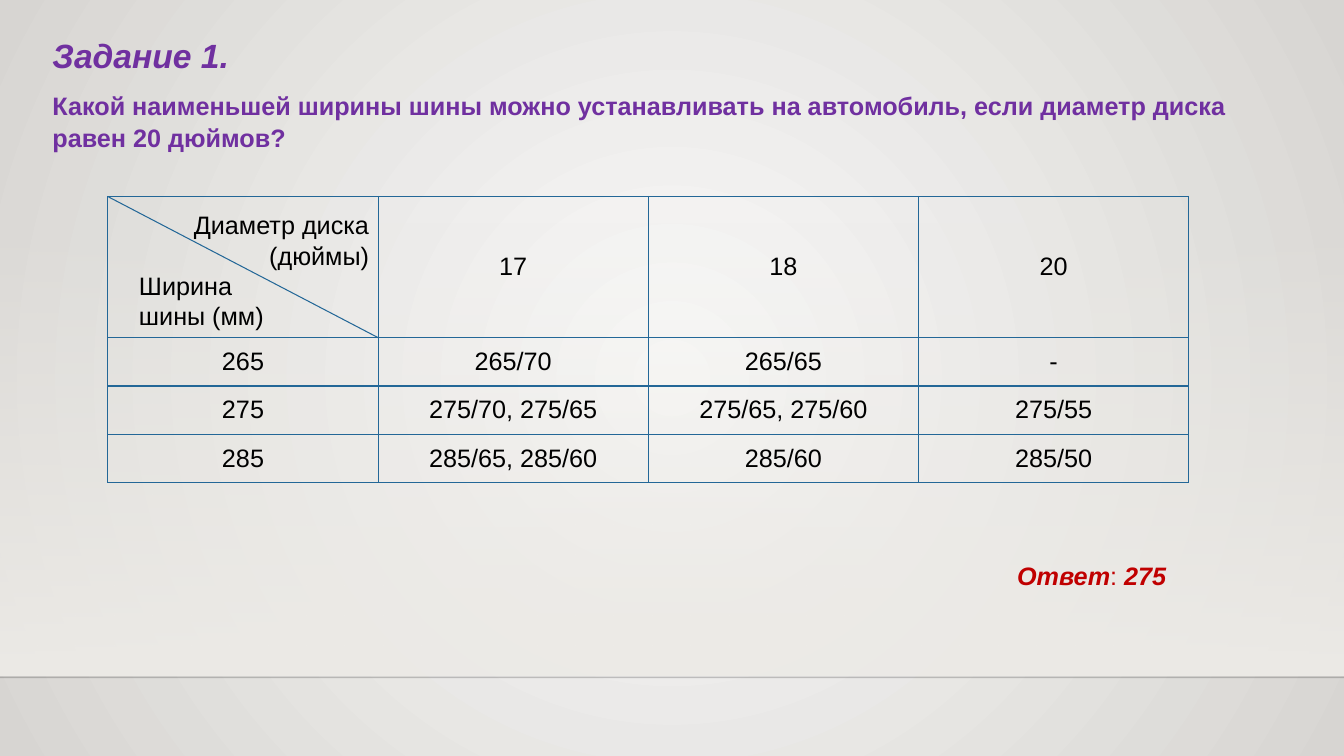
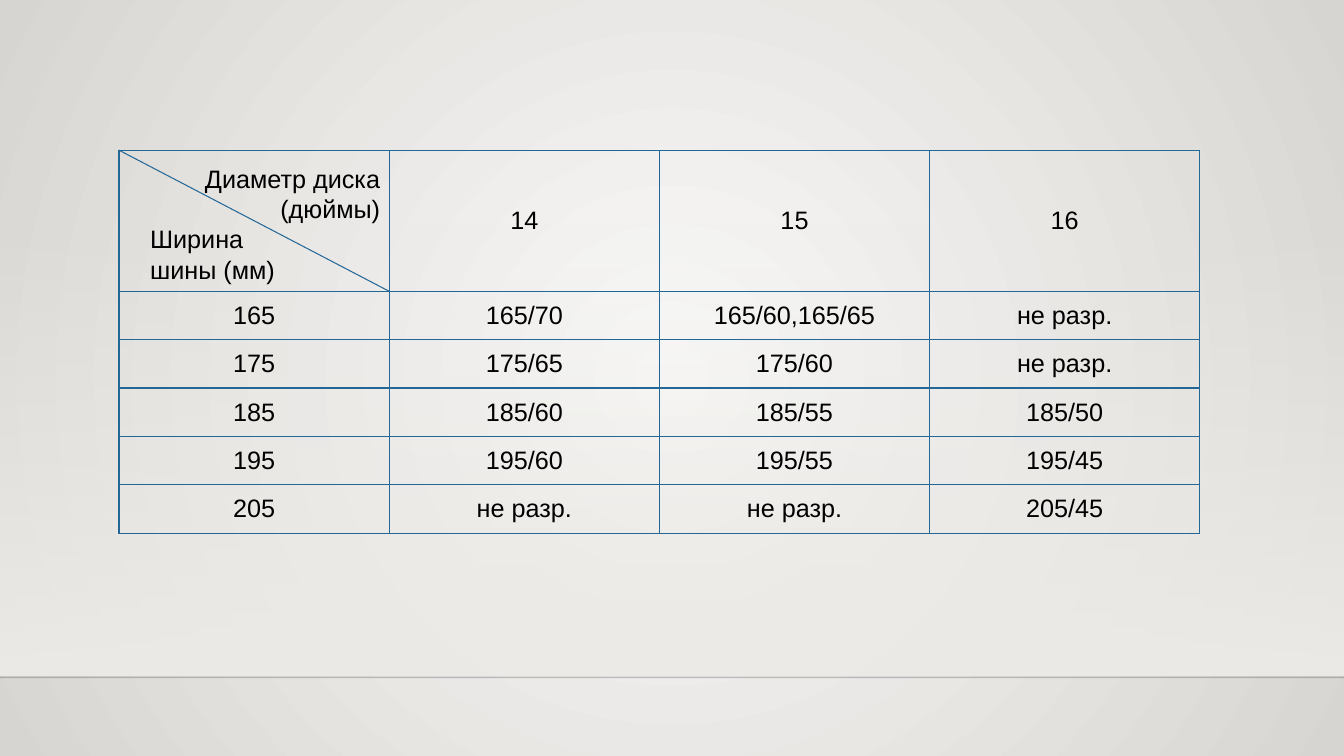
from lxml import etree
from pptx import Presentation
from pptx.dml.color import RGBColor
from pptx.enum.shapes import MSO_CONNECTOR, MSO_SHAPE
from pptx.enum.text import MSO_ANCHOR, MSO_AUTO_SIZE, PP_ALIGN
from pptx.oxml.ns import qn
from pptx.util import Inches, Pt

LEFT, CENTER, RIGHT = PP_ALIGN.LEFT, PP_ALIGN.CENTER, PP_ALIGN.RIGHT
TOP, MIDDLE = MSO_ANCHOR.TOP, MSO_ANCHOR.MIDDLE
NO_AUTOFIT = MSO_AUTO_SIZE.NONE
STRAIGHT, RECTANGLE = MSO_CONNECTOR.STRAIGHT, MSO_SHAPE.RECTANGLE

FONT = "Arial"
BLACK = RGBColor(0x00, 0x00, 0x00)
PURPLE = RGBColor(0x70, 0x30, 0xA0)
RED = RGBColor(0xC0, 0x00, 0x00)
GRID_BLUE = RGBColor(0x23, 0x67, 0x97)
FLOOR_LINE = RGBColor(0x00, 0x00, 0x01)
CENTER_GRAY = RGBColor(0xFA, 0xFA, 0xF9)
EDGE_GRAY = RGBColor(0xD7, 0xD5, 0xD2)
BAND_GRAY = RGBColor(0xED, 0xEB, 0xE7)

SLIDE_W, SLIDE_H = 13.33, 7.5
COLUMN_W, HEADER_H, ROW_H = 2.68, 1.4, 0.48
CELL_MARGIN = 0.01

TASK = "Задание 1."
QUESTION = ("Какой наименьшей ширины шины можно устанавливать на автомобиль, "
            "если диаметр диска равен 20 дюймов?")
ANSWER = [("Ответ", True), (": ", False), ("275", True)]

# Corner labels: lines, alignment, offset in the corner cell, size
CORNER_LABELS = [
    (["Диаметр диска", "(дюймы)"], RIGHT, (0.73, 0.08), (1.96, 0.71)),
    (["Ширина", "шины (мм)"], LEFT, (0.21, 0.68), (1.52, 0.71)),
]

TASK_TIRES = [
    ["", "17", "18", "20"],
    ["265", "265/70", "265/65", "-"],
    ["275", "275/70, 275/65", "275/65, 275/60", "275/55"],
    ["285", "285/65, 285/60", "285/60", "285/50"],
]
ALLOWED_TIRES = [
    ["", "14", "15", "16"],
    ["165", "165/70", "165/60,165/65", "не разр."],
    ["175", "175/65", "175/60", "не разр."],
    ["185", "185/60", "185/55", "185/50"],
    ["195", "195/60", "195/55", "195/45"],
    ["205", "не разр.", "не разр.", "205/45"],
]


def write(paragraph, text, size=18, color=BLACK, bold=False, italic=False, align=LEFT):
    """Append one formatted run to the paragraph."""
    paragraph.alignment = align
    run = paragraph.add_run()
    run.text = text
    font = run.font
    font.name, font.size, font.bold, font.italic = FONT, Pt(size), bold, italic
    font.color.rgb = color


def add_color(parent, color, alpha=100):
    node = etree.SubElement(parent, qn("a:srgbClr"), val=str(color))
    if alpha < 100:
        etree.SubElement(node, qn("a:alpha"), val=str(alpha * 1000))


def set_gradient(fill, owner, stops, radial=False):
    """Fill with (color, alpha) stops, from the centre out or from the top down."""
    fill.gradient()
    gradient = owner.xpath(".//a:gradFill")[0]
    for child in list(gradient):
        gradient.remove(child)
    stop_list = etree.SubElement(gradient, qn("a:gsLst"))
    for index, (color, alpha) in enumerate(stops):
        position = str(index * 100000 // (len(stops) - 1))
        add_color(etree.SubElement(stop_list, qn("a:gs"), pos=position), color, alpha)
    if radial:
        circle = etree.SubElement(gradient, qn("a:path"))
        circle.set("path", "circle")
        etree.SubElement(circle, qn("a:fillToRect"), l="50000", t="50000", r="50000", b="50000")
    else:
        etree.SubElement(gradient, qn("a:lin"), ang="5400000", scaled="0")


def add_line(slide, x1, y1, x2, y2, color, width):
    line = slide.shapes.add_connector(STRAIGHT, Inches(x1), Inches(y1), Inches(x2), Inches(y2))
    line.line.color.rgb = color
    line.line.width = Pt(width)
    etree.SubElement(line.element.spPr, qn("a:effectLst"))
    return line


def add_text_frame(slide, x, y, w, h, wrap=True):
    frame = slide.shapes.add_textbox(Inches(x), Inches(y), Inches(w), Inches(h)).text_frame
    frame.word_wrap = wrap
    return frame


def style_master(master, slide):
    """Set the shared background; the slide only serves to create its band and line."""
    set_gradient(master.background.fill, master.element,
                 [(CENTER_GRAY, 100), (EDGE_GRAY, 100)], radial=True)

    band = slide.shapes.add_shape(RECTANGLE, 0, Inches(2.2), Inches(SLIDE_W), Inches(4.5))
    band.shadow.inherit = False
    band.line.fill.background()
    set_gradient(band.fill, band.element, [(BAND_GRAY, 0), (BAND_GRAY, 100)])

    floor = add_line(slide, 0, 6.72, SLIDE_W, 6.72, FLOOR_LINE, 1)
    color = floor.element.xpath(".//a:ln//a:srgbClr")[0]
    etree.SubElement(color, qn("a:alpha"), val="20000")

    for index, part in enumerate((band, floor)):
        part.element.xpath(".//p:cNvPr")[0].set("id", str(100 + index))
        master.shapes.element.insert(2 + index, part.element)


def style_cell(cell):
    cell.fill.background()
    cell.vertical_anchor = MIDDLE
    cell.margin_left = cell.margin_right = Inches(CELL_MARGIN)
    cell.margin_top = cell.margin_bottom = Inches(CELL_MARGIN)
    properties = cell._tc.get_or_add_tcPr()
    for index, side in enumerate(("a:lnL", "a:lnR", "a:lnT", "a:lnB")):
        border = etree.Element(qn(side), w=str(Pt(1)))
        add_color(etree.SubElement(border, qn("a:solidFill")), GRID_BLUE)
        properties.insert(index, border)


def add_tire_table(slide, x, y, rows):
    height = HEADER_H + ROW_H * (len(rows) - 1)
    table = slide.shapes.add_table(len(rows), len(rows[0]), Inches(x), Inches(y),
                                   Inches(COLUMN_W * len(rows[0])), Inches(height)).table
    table.first_row = table.horz_banding = False
    for column in table.columns:
        column.width = Inches(COLUMN_W)
    for r, values in enumerate(rows):
        table.rows[r].height = Inches(ROW_H if r else HEADER_H)
        for c, value in enumerate(values):
            cell = table.cell(r, c)
            style_cell(cell)
            if value:
                write(cell.text_frame.paragraphs[0], value, align=CENTER)

    add_line(slide, x, y, x + COLUMN_W, y + HEADER_H, GRID_BLUE, 0.75)
    for lines, align, (dx, dy), size in CORNER_LABELS:
        frame = add_text_frame(slide, x + dx, y + dy, *size, wrap=False)
        for index, line in enumerate(lines):
            paragraph = frame.add_paragraph() if index else frame.paragraphs[0]
            write(paragraph, line, align=align)


def add_task_title(slide):
    title = slide.shapes.title
    title.left, title.top = Inches(0.42), Inches(0.27)
    title.width, title.height = Inches(12.38), Inches(1.31)
    frame = title.text_frame
    frame.word_wrap, frame.auto_size, frame.vertical_anchor = True, NO_AUTOFIT, TOP
    heading, question = frame.paragraphs[0], frame.add_paragraph()
    write(heading, TASK, size=24, color=PURPLE, bold=True, italic=True)
    write(question, QUESTION, color=PURPLE, bold=True)
    heading.line_spacing = question.line_spacing = 1.07
    heading.space_after = question.space_before = Pt(4.5)


def main():
    prs = Presentation()
    prs.slide_width, prs.slide_height = Inches(SLIDE_W), Inches(SLIDE_H)
    title_only, blank = prs.slide_layouts[5], prs.slide_layouts[6]

    task = prs.slides.add_slide(title_only)
    style_master(prs.slide_master, task)
    add_task_title(task)
    add_tire_table(task, 1.07, 1.95, TASK_TIRES)
    answer = add_text_frame(task, 9.99, 5.51, 1.8, 0.4).paragraphs[0]
    for text, strong in ANSWER:
        write(answer, text, color=RED, bold=strong, italic=strong)

    allowed = prs.slides.add_slide(blank)
    add_tire_table(allowed, 1.18, 1.49, ALLOWED_TIRES)

    prs.save("out.pptx")


if __name__ == "__main__":
    main()
